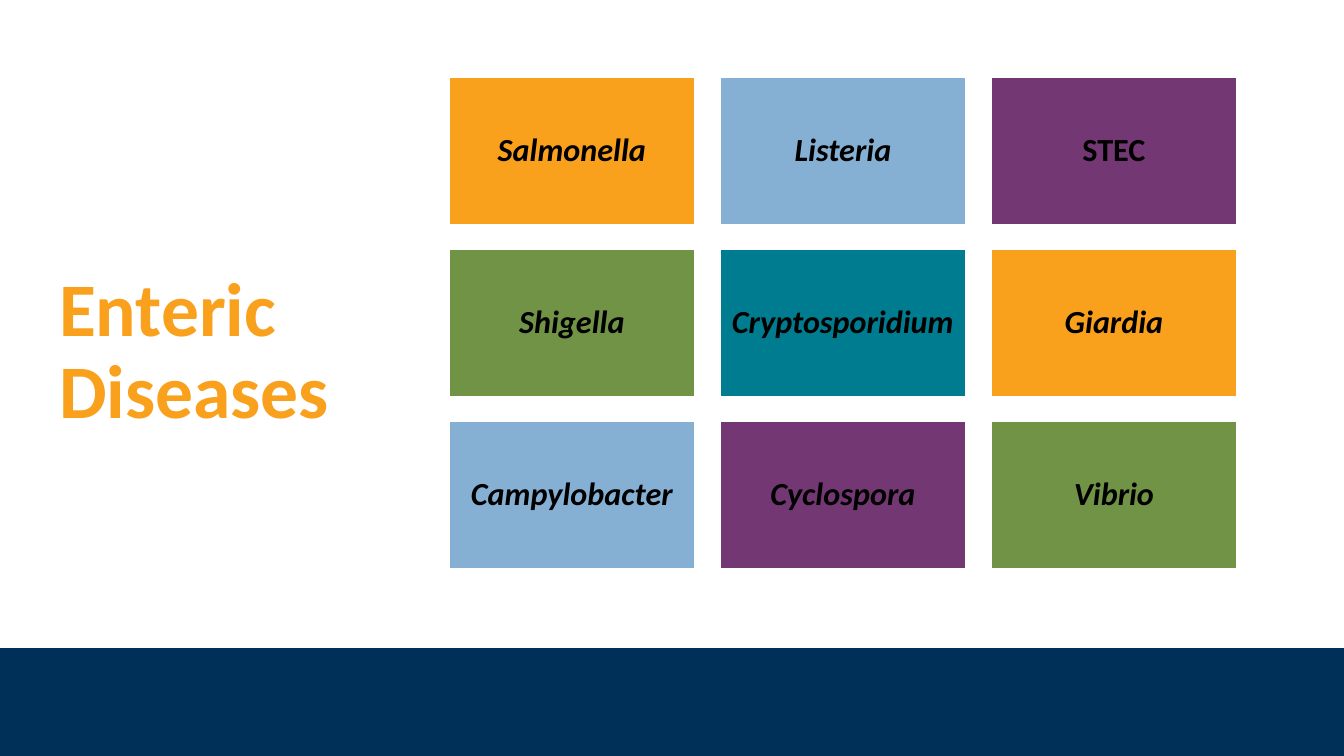
"""Build the Enteric Diseases slide with its grid of pathogen tiles."""
import pptx
import pptx.dml.color
import pptx.enum.shapes
import pptx.enum.text
import pptx.util

TITLE = "Enteric Diseases"
FONT = "Calibri"
ORANGE, BLUE, PURPLE = "F9A01D", "86B0D3", "733873"
GREEN, TEAL, NAVY = "709345", "007C90", "003057"
WHITE, BLACK = "FFFFFF", "000000"

PATHOGENS = [
    ("Salmonella", ORANGE, True),
    ("Listeria", BLUE, True),
    ("STEC", PURPLE, False),
    ("Shigella", GREEN, True),
    ("Cryptosporidium", TEAL, True),
    ("Giardia", ORANGE, True),
    ("Campylobacter", BLUE, True),
    ("Cyclospora", PURPLE, True),
    ("Vibrio", GREEN, True),
]

SLIDE_WIDTH, SLIDE_HEIGHT = 1344, 756
BAND_TOP = 648
TITLE_BOX = (49, 266, 434, 79)
GRID_LEFT, GRID_TOP, COLUMNS = 449, 77, 3
TILE_WIDTH, TILE_HEIGHT = 246, 148
COLUMN_GAP, ROW_GAP = 25, 24
TILE_INSET = 9

ALIGN = pptx.enum.text.PP_ALIGN
ANCHOR = pptx.enum.text.MSO_ANCHOR


def px(length):
    return pptx.util.Emu(round(length * 12192000 / SLIDE_WIDTH))


def color(value):
    return pptx.dml.color.RGBColor.from_string(value)


def write(shape, text, *, size, fill, italic=False, align=ALIGN.LEFT,
          anchor=ANCHOR.TOP, inset=None):
    frame = shape.text_frame
    frame.word_wrap = True
    frame.auto_size = pptx.enum.text.MSO_AUTO_SIZE.NONE
    frame.vertical_anchor = anchor
    if inset is not None:
        frame.margin_left = frame.margin_right = px(inset)
        frame.margin_top = frame.margin_bottom = px(inset)
    paragraph = frame.paragraphs[0]
    paragraph.alignment = align
    paragraph.line_spacing = 0.9
    paragraph.space_before = pptx.util.Pt(0)
    run = paragraph.add_run()
    run.text = text
    run.font.name = FONT
    run.font.size = pptx.util.Pt(size)
    run.font.bold = True
    run.font.italic = italic
    run.font.color.rgb = color(fill)


def add_rectangle(slide, box, fill, line=None):
    shape = slide.shapes.add_shape(
        pptx.enum.shapes.MSO_SHAPE.RECTANGLE, *map(px, box))
    shape.shadow.inherit = False
    shape.fill.solid()
    shape.fill.fore_color.rgb = color(fill)
    if line:
        shape.line.color.rgb = color(line)
        shape.line.width = pptx.util.Pt(1)
    else:
        shape.line.fill.background()
    return shape


def main():
    presentation = pptx.Presentation()
    presentation.slide_width = px(SLIDE_WIDTH)
    presentation.slide_height = px(SLIDE_HEIGHT)
    slide = presentation.slides.add_slide(
        presentation.slide_layouts.get_by_name("Title Only"))

    add_rectangle(
        slide, (0, BAND_TOP, SLIDE_WIDTH, SLIDE_HEIGHT - BAND_TOP), NAVY)

    title = slide.shapes.title
    title.left, title.top, title.width, title.height = map(px, TITLE_BOX)
    write(title, TITLE, size=54, fill=ORANGE)

    for index, (name, fill, italic) in enumerate(PATHOGENS):
        row, column = divmod(index, COLUMNS)
        left = GRID_LEFT + column * (TILE_WIDTH + COLUMN_GAP)
        top = GRID_TOP + row * (TILE_HEIGHT + ROW_GAP)
        tile = add_rectangle(
            slide, (left, top, TILE_WIDTH, TILE_HEIGHT), fill, line=WHITE)
        write(tile, name, size=23, fill=BLACK, italic=italic,
              align=ALIGN.CENTER, anchor=ANCHOR.MIDDLE, inset=TILE_INSET)

    presentation.save("out.pptx")


if __name__ == "__main__":
    main()
